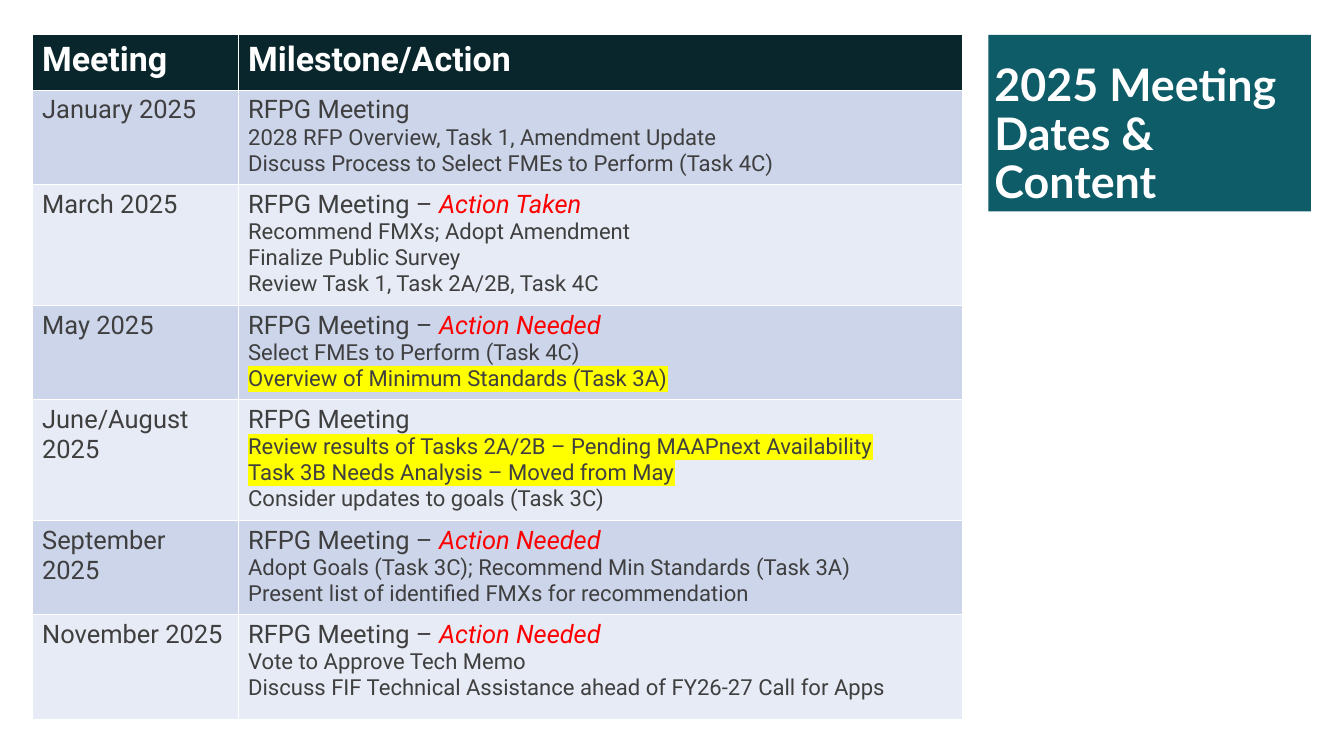
from typing import NamedTuple

from lxml.etree import SubElement
from pptx import Presentation
from pptx.dml.color import RGBColor
from pptx.enum.text import MSO_ANCHOR as Anchor, MSO_AUTO_SIZE as Fit, PP_ALIGN as Align
from pptx.oxml.ns import qn
from pptx.util import Emu, Pt

SCALE = 9144  # EMU in one px, 100 px to the inch
DARK, TEAL, GREY, RED = "09262C", "0E5C68", "3F3F3F", "FF0000"
WHITE, YELLOW = "FFFFFF", "FFFF00"
BANDS = ("CCD5EA", "E7EBF5")
WIDTHS = (337, 1185)
HEAD = 91


class Topic(NamedTuple):
    text: str
    marked: bool = False


class Meeting(NamedTuple):
    date: str
    height: int
    topics: list[Topic]
    action: str = ""


MEETINGS = [
    Meeting("January 2025", 154, [
        Topic("2028 RFP Overview, Task 1, Amendment Update"),
        Topic("Discuss Process to Select FMEs to Perform (Task 4C)")]),
    Meeting("March 2025", 198, [
        Topic("Recommend FMXs; Adopt Amendment"),
        Topic("Finalize Public Survey"),
        Topic("Review Task 1, Task 2A/2B, Task 4C")], "Action Taken"),
    Meeting("May 2025", 154, [
        Topic("Select FMEs to Perform (Task 4C)"),
        Topic("Overview of Minimum Standards (Task 3A)", True)], "Action Needed"),
    Meeting("June/August 2025", 198, [
        Topic("Review results of Tasks 2A/2B – Pending MAAPnext Availability", True),
        Topic("Task 3B Needs Analysis – Moved from May", True),
        Topic("Consider updates to goals (Task 3C)")]),
    Meeting("September 2025", 154, [
        Topic("Adopt Goals (Task 3C); Recommend Min Standards (Task 3A)"),
        Topic("Present list of identified FMXs for recommendation")], "Action Needed"),
    Meeting("November 2025", 172, [
        Topic("Vote to Approve Tech Memo"),
        Topic("Discuss FIF Technical Assistance ahead of FY26-27 Call for Apps")],
        "Action Needed"),
]


def px(n: int) -> Emu:
    return Emu(n * SCALE)


def rgb(code: str) -> RGBColor:
    return RGBColor.from_string(code)


def paint(part, code: str) -> None:
    part.fill.solid()
    part.fill.fore_color.rgb = rgb(code)


def style(para, size: float, code: str, bold: bool = False, face: str = "Roboto") -> None:
    font = para.font
    font.name, font.size, font.bold = face, Pt(size), bold
    font.color.rgb = rgb(code)


def mark(run) -> None:
    """Highlight a run in yellow."""
    light = SubElement(run.font._element, qn("a:highlight"))
    SubElement(light, qn("a:srgbClr")).set("val", YELLOW)


def set_cell(cell, text: str, code: str):
    """Fill a cell, pad it and return its first paragraph."""
    paint(cell, code)
    cell.margin_left = cell.margin_right = px(16)
    cell.margin_top = cell.margin_bottom = px(8)
    para = cell.text_frame.paragraphs[0]
    para.add_run().text = text
    return para


def add_meeting(table, row: int, meet: Meeting) -> None:
    table.rows[row].height = px(meet.height)
    band = BANDS[(row - 1) % 2]
    style(set_cell(table.cell(row, 0), meet.date, band), 30, GREY)

    cell = table.cell(row, 1)
    lead = "RFPG Meeting – " if meet.action else "RFPG Meeting"
    para = set_cell(cell, lead, band)
    style(para, 30, GREY)
    if meet.action:
        run = para.add_run()
        run.text = meet.action
        run.font.italic = True
        run.font.color.rgb = rgb(RED)
    for topic in meet.topics:
        para = cell.text_frame.add_paragraph()
        run = para.add_run()
        run.text = topic.text
        if topic.marked:
            mark(run)
        style(para, 26, GREY)


def add_table(slide) -> None:
    high = HEAD + sum(meet.height for meet in MEETINGS)
    table = slide.shapes.add_table(
        len(MEETINGS) + 1, len(WIDTHS), px(53), px(57), px(sum(WIDTHS)), px(high)).table
    table.rows[0].height = px(HEAD)
    for col, (name, wide) in enumerate(zip(("Meeting", "Milestone/Action"), WIDTHS)):
        table.columns[col].width = px(wide)
        style(set_cell(table.cell(0, col), name, DARK), 40, WHITE, True)
    for row, meet in enumerate(MEETINGS, 1):
        add_meeting(table, row, meet)


def set_title(slide) -> None:
    title = slide.shapes.title
    title.left, title.top, title.width, title.height = map(px, (1617, 57, 528, 289))
    paint(title, TEAL)
    frame = title.text_frame
    frame.text = "2025 Meeting Dates & Content"
    frame.word_wrap = True
    frame.auto_size = Fit.NONE
    frame.vertical_anchor = Anchor.BOTTOM
    para = frame.paragraphs[0]
    para.alignment = Align.LEFT
    para.line_spacing = 0.9
    style(para, 52.8, WHITE, True, "Lato")


def main() -> None:
    deck = Presentation()
    deck.slide_width, deck.slide_height = px(2199), px(1237)
    slide = deck.slides.add_slide(deck.slide_layouts.get_by_name("Title Only"))
    set_title(slide)
    add_table(slide)
    deck.save("out.pptx")


if __name__ == "__main__":
    main()
